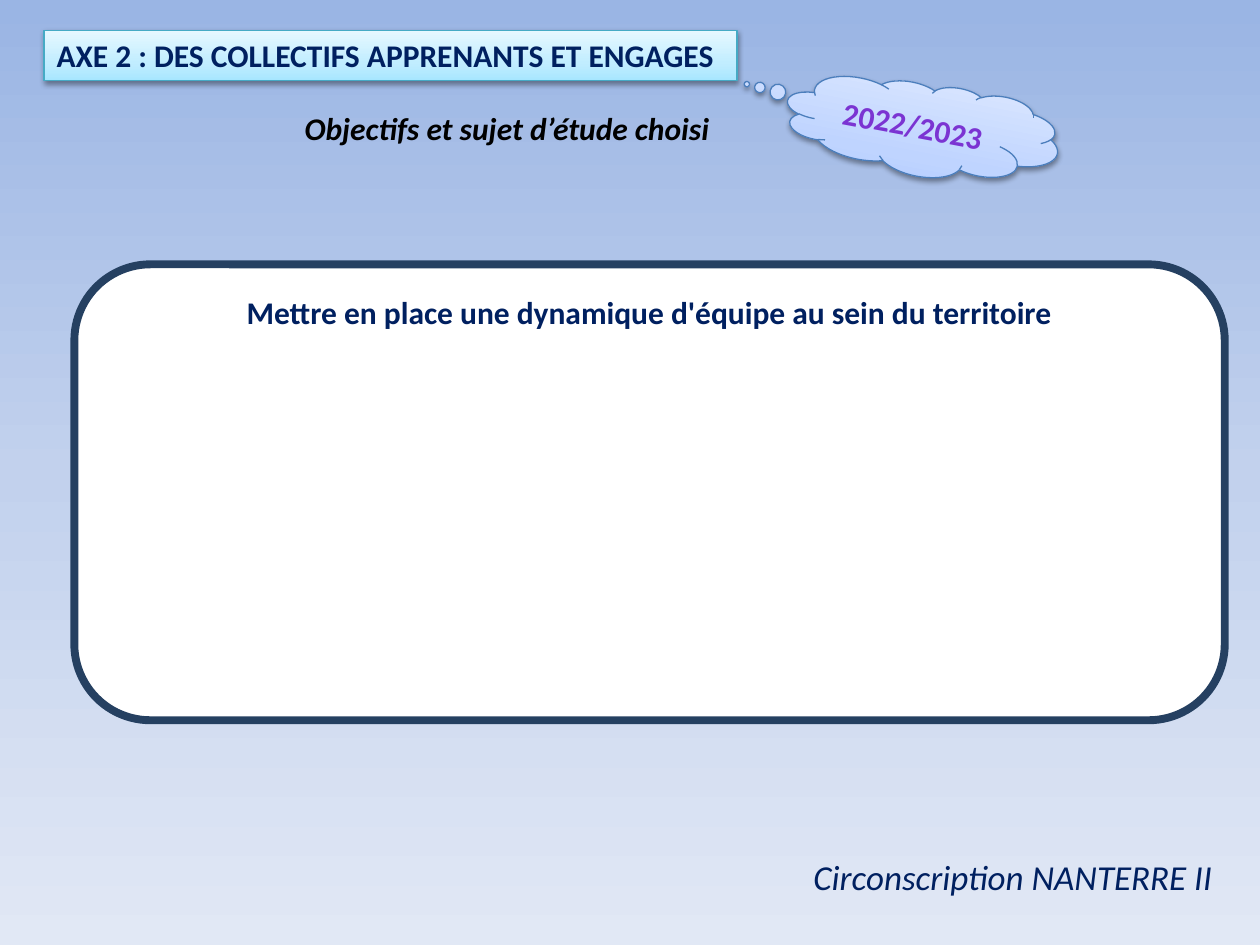
from pptx import Presentation
from pptx.dml.color import RGBColor
from pptx.enum.shapes import MSO_SHAPE
from pptx.enum.text import MSO_ANCHOR, PP_ALIGN
from pptx.oxml import parse_xml
from pptx.oxml.ns import nsdecls, qn
from pptx.util import Cm, Pt

RECT, ROUND, CLOUD = MSO_SHAPE.RECTANGLE, MSO_SHAPE.ROUNDED_RECTANGLE, MSO_SHAPE.CLOUD_CALLOUT
LEFT, MID, RIGHT = PP_ALIGN.LEFT, PP_ALIGN.CENTER, PP_ALIGN.RIGHT
TOP, CENTER = MSO_ANCHOR.TOP, MSO_ANCHOR.MIDDLE

# Gradients are (angle, stops), with the angle clockwise in degrees.
THEME = {
    "font": "Calibri", "body": 18, "foot": 20,
    "navy": "002060", "black": "000000", "white": "FFFFFF",
    "sky": (90, [(0, "9AB5E4"), (50, "C2D1ED"), (100, "E1E8F5")]),
    "aqua": (270, [(0, "A7E6FF"), (35, "C1EDFF"), (100, "E7F8FF")]),
    "mist": (270, [(0, "A4C4FF"), (35, "BFD4FF"), (100, "E6EEFF")]),
    "violet": (90, [(0, "3D1B67"), (43, "7B34D2"), (48, "7330C4"), (100, "3D1B67")]),
    "edge": ("46AAC5", 0.75), "frame": ("254061", 4.5),
    "rim": ("4B7EBC", 0.75), "outline": ("5E457C", 0.71),
}

# Boxes are left, top, width, height in centimetres.
ITEMS = [
    dict(box=(0.89, 0.61, 13.97, 1.02), form=RECT, fill="aqua", line="edge", shade=True,
         text="AXE 2 : DES COLLECTIFS APPRENANTS ET ENGAGES", bold=True),
    dict(box=(1.5, 5.33, 23.19, 9.19), form=ROUND, fill="white", line="frame", align=MID,
         text="Mettre en place une dynamique d'équipe au sein du territoire", bold=True),
    dict(box=(13.69, 17.12, 11, 1.12), text="Circonscription NANTERRE II",
         size="foot", italic=True, align=RIGHT),
    dict(box=(5.89, 2.08, 9.27, 1.02), text="Objectifs et sujet d’étude choisi",
         color="black", bold=True, italic=True),
    dict(box=(15.82, 1.65, 5.54, 1.9), form=CLOUD, fill="mist", line="rim", shade=True,
         turn=10.8, tail=(-0.657, -0.118), text="2022/2023", color="violet",
         outline="outline", bold=True, align=MID, anchor=CENTER),
]


def paint(fill, root, name):
    """Fill with a theme colour or gradient; root is the XML that holds the fill."""
    value = THEME[name]
    if isinstance(value, str):
        fill.solid()
        fill.fore_color.rgb = RGBColor.from_string(value)
        return
    angle, stops = value
    fill.gradient()
    marks = "".join(f'<a:gs pos="{pos * 1000}"><a:srgbClr val="{color}"/></a:gs>'
                    for pos, color in stops)
    old = root.find(".//" + qn("a:gradFill"))
    old.getparent().replace(old, parse_xml(
        f'<a:gradFill {nsdecls("a")} rotWithShape="1"><a:gsLst>{marks}</a:gsLst>'
        f'<a:lin ang="{angle * 60000}" scaled="0"/></a:gradFill>'))


def shade(shape):
    shape.element.spPr.find(qn("a:effectLst")).append(parse_xml(
        f'<a:outerShdw {nsdecls("a")} blurRad="{Pt(3.1)}" dist="{Pt(1.6)}" dir="5400000" '
        'rotWithShape="0"><a:srgbClr val="000000"><a:alpha val="38000"/></a:srgbClr>'
        '</a:outerShdw>'))


def write(shape, item):
    frame = shape.text_frame
    frame.word_wrap = True
    frame.vertical_anchor = item.get("anchor", TOP)
    para = frame.paragraphs[0]
    para.alignment = item.get("align", LEFT)
    run = para.add_run()
    run.text = item["text"]
    font = run.font
    font.name = THEME["font"]
    font.size = Pt(THEME[item.get("size", "body")])
    font.bold = item.get("bold", False)
    font.italic = item.get("italic", False)
    paint(font.fill, run._r, item.get("color", "navy"))
    if "outline" in item:
        color, width = THEME[item["outline"]]
        run._r.rPr.insert(0, parse_xml(
            f'<a:ln {nsdecls("a")} w="{Pt(width)}"><a:solidFill>'
            f'<a:srgbClr val="{color}"/></a:solidFill></a:ln>'))


def place(slide, item):
    box = [Cm(n) for n in item["box"]]
    if "form" not in item:
        write(slide.shapes.add_textbox(*box), item)
        return
    shape = slide.shapes.add_shape(item["form"], *box)
    shape.shadow.inherit = False
    shape.rotation = item.get("turn", 0)
    for i, value in enumerate(item.get("tail", ())):
        shape.adjustments[i] = value
    paint(shape.fill, shape.element, item["fill"])
    color, width = THEME[item["line"]]
    shape.line.color.rgb = RGBColor.from_string(color)
    shape.line.width = Pt(width)
    if item.get("shade"):
        shade(shape)
    write(shape, item)


def main():
    deck = Presentation()
    deck.slide_width, deck.slide_height = Cm(25.4), Cm(19.05)
    slide = deck.slides.add_slide(deck.slide_layouts[6])
    paint(slide.background.fill, slide.element, "sky")
    for item in ITEMS:
        place(slide, item)
    deck.save("out.pptx")


if __name__ == "__main__":
    main()
